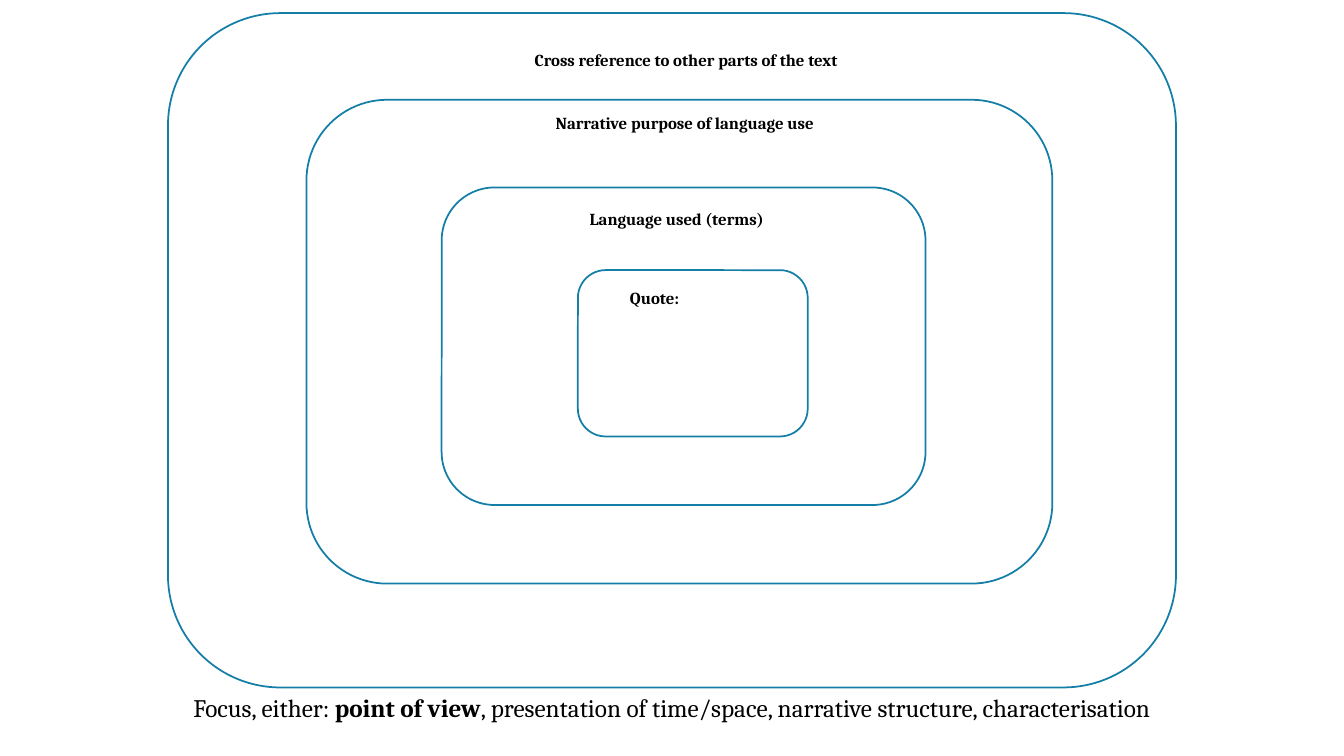
from pptx import Presentation
from pptx.dml.color import RGBColor
from pptx.enum.shapes import MSO_SHAPE
from pptx.enum.text import PP_ALIGN
from pptx.util import Inches, Pt

ROUNDED = MSO_SHAPE.ROUNDED_RECTANGLE
LEFT, CENTER = PP_ALIGN.LEFT, PP_ALIGN.CENTER
WHITE = RGBColor(0xFF, 0xFF, 0xFF)
BLACK = RGBColor(0x00, 0x00, 0x00)
TEAL = RGBColor(0x14, 0x7E, 0xA6)

presentation = Presentation()
presentation.slide_width = Inches(13.33)
presentation.slide_height = Inches(7.5)
BLANK_LAYOUT = presentation.slide_layouts[6]
slide = presentation.slides.add_slide(BLANK_LAYOUT)


def place(left, top, width, height):
    """Turn percentages of the slide's size into lengths."""
    slide_width, slide_height = presentation.slide_width, presentation.slide_height
    return [int(share * size / 100) for share, size in (
        (left, slide_width), (top, slide_height),
        (width, slide_width), (height, slide_height))]


def add_text(area, runs, size, alignment=LEFT, margin_left=0.1):
    """Add a text box; runs are (text, bold) pairs, the margin is in inches."""
    frame = slide.shapes.add_textbox(*place(*area)).text_frame
    frame.word_wrap = True
    frame.margin_left = Inches(margin_left)
    paragraph = frame.paragraphs[0]
    paragraph.alignment = alignment
    for text, bold in runs:
        run = paragraph.add_run()
        run.text = text
        run.font.color.rgb = BLACK
        font_format = {"name": "Cambria", "size": Pt(size), "bold": bold}
        for attribute, value in font_format.items():
            setattr(run.font, attribute, value)


# Nested frames, from the outermost to the innermost
frame_areas = [
    (12.5, 1.73, 75, 89.2),
    (22.8, 13.2, 55.5, 64),
    (32.86, 24.8, 36, 42),
    (43, 35.73, 17.1, 22),
]
for area in frame_areas:
    shape = slide.shapes.add_shape(ROUNDED, *place(*area))
    shape.shadow.inherit = False
    shape.fill.solid()
    shape.fill.fore_color.rgb = WHITE
    shape.line.color.rgb = TEAL
    shape.line.width = Pt(1.25)

# Frame labels: text, area, left margin
labels = [
    ("Quote:", (43.5, 37.47, 8.85, 4), 0.45),
    ("Language used (terms)", (42.3, 26.93, 15.4, 6.67), 0.21),
    ("Narrative purpose of language use", (40.6, 14.27, 21.2, 6.67), 0.1),
    ("Cross reference to other parts of the text", (38.2, 5.87, 29.5, 4), 0.21),
]
for text, area, margin_left in labels:
    add_text(area, [(text, True)], 12, margin_left=margin_left)

focus_runs = [
    ("Focus, either: ", False),
    ("point of view", True),
    (", presentation of time/space, narrative structure, characterisation", False),
]
add_text((12.5, 90.93, 75, 5.33), focus_runs, 18, CENTER)

presentation.save("out.pptx")
